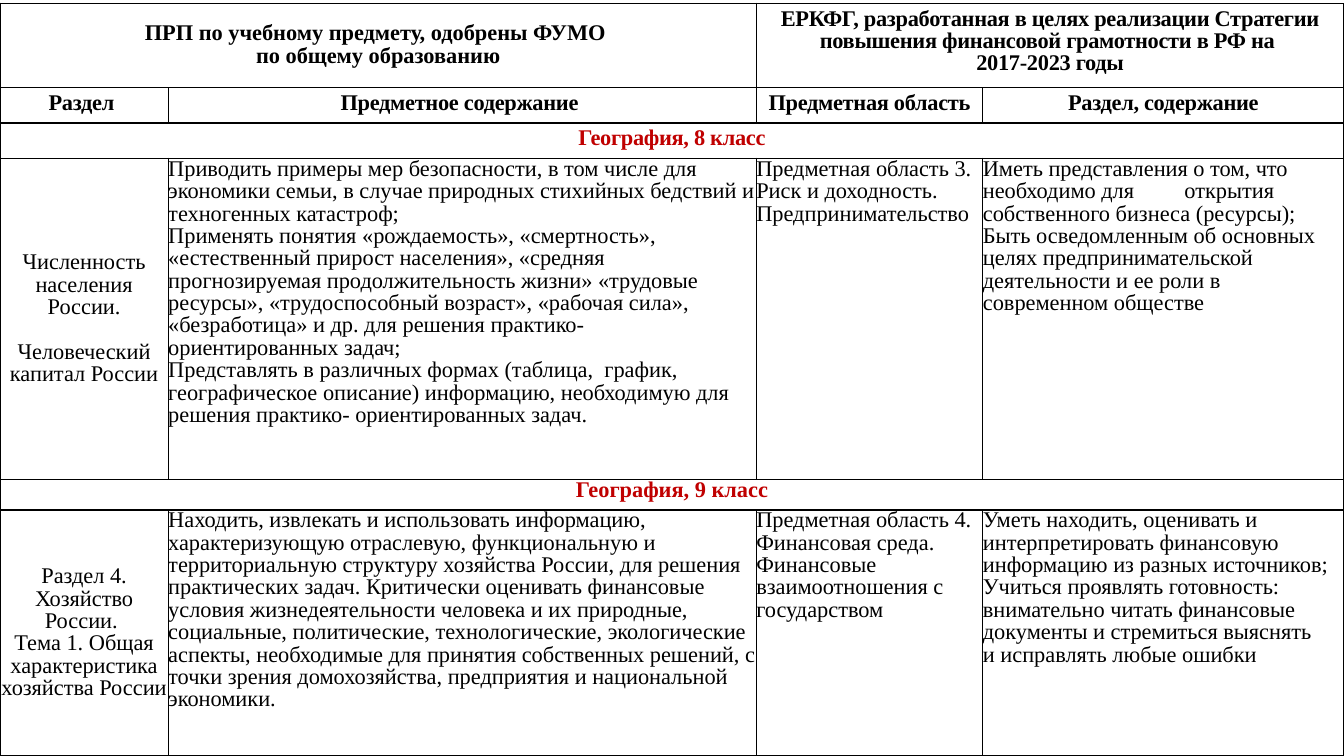
"""Builds a slide comparing geography curricula with the financial literacy framework."""
import pptx
import pptx.dml.color
import pptx.enum.text
import pptx.util
from lxml import etree
from pptx.oxml.ns import qn

Cm = pptx.util.Cm
Pt = pptx.util.Pt
RGBColor = pptx.dml.color.RGBColor
ALIGN = pptx.enum.text.PP_ALIGN
ANCHOR = pptx.enum.text.MSO_ANCHOR

BLACK = RGBColor(0x00, 0x00, 0x00)
RED = RGBColor(0xC0, 0x00, 0x00)

COLUMN_WIDTHS = [4.24, 14.82, 5.71, 9.1]
ROW_HEIGHTS = [2.13, 0.89, 0.89, 8.1, 0.76, 6.2]

NO_MARGINS = dict.fromkeys(("margin_left", "margin_right", "margin_top", "margin_bottom"), 0)
CENTERED = {"alignment": ALIGN.CENTER}
LEFT = {"alignment": ALIGN.LEFT}
MIDDLE = {"vertical_anchor": ANCHOR.MIDDLE}

HEADING = {"cell": {}, "paragraph": CENTERED, "font": {"bold": True}, "color": BLACK, "tracking": -20}
TITLE = {**HEADING, "cell": MIDDLE, "tracking": 0}
GRADE = {**HEADING, "color": RED}
TIGHT_GRADE = {**GRADE, "cell": NO_MARGINS, "tracking": 0}
TOPIC = {"cell": {**NO_MARGINS, **MIDDLE}, "paragraph": CENTERED, "font": {"bold": False},
         "color": BLACK, "tracking": 0}
BODY = {**TOPIC, "cell": NO_MARGINS, "paragraph": LEFT}

MERGES = [(0, 0, 1), (0, 2, 3), (2, 0, 3), (4, 0, 3)]

CELLS = [
    (0, 0, TITLE, ["ПРП по учебному предмету, одобрены ФУМО ", "по общему образованию"]),
    (0, 2, HEADING, [
        "ЕРКФГ, разработанная в целях реализации Стратегии повышения финансовой грамотности в РФ на ",
        "2017-2023 годы"]),
    (1, 0, HEADING, ["Раздел "]),
    (1, 1, HEADING, ["Предметное содержание "]),
    (1, 2, HEADING, ["Предметная область"]),
    (1, 3, HEADING, ["Раздел, содержание"]),
    (2, 0, GRADE, ["География, 8 класс"]),
    (3, 0, TOPIC, ["Численность населения России.", "Человеческий капитал России"]),
    (3, 1, BODY, [
        "Приводить примеры мер безопасности, в том числе для экономики семьи, "
        "в случае природных стихийных бедствий и техногенных катастроф;",
        "Применять понятия «рождаемость», «смертность», «естественный прирост населения», "
        "«средняя прогнозируемая продолжительность жизни» «трудовые ресурсы», "
        "«трудоспособный возраст», «рабочая сила», «безработица» и др. "
        "для решения практико- ориентированных задач;",
        "Представлять в различных формах (таблица,  график, географическое описание) "
        "информацию, необходимую для решения практико- ориентированных задач."]),
    (3, 2, BODY, ["Предметная область 3.", "Риск и доходность. ", "Предпринимательство"]),
    (3, 3, BODY, [
        "Иметь представления о том, что необходимо для\tоткрытия собственного бизнеса (ресурсы);",
        "Быть осведомленным об основных целях предпринимательской деятельности "
        "и ее роли в современном обществе"]),
    (4, 0, TIGHT_GRADE, ["География, 9 класс"]),
    (5, 0, TOPIC, ["Раздел 4.", "Хозяйство России. ", "Тема 1. Общая характеристика хозяйства России"]),
    (5, 1, BODY, [
        "Находить, извлекать и использовать информацию, характеризующую отраслевую, "
        "функциональную и территориальную структуру хозяйства России, для решения "
        "практических задач. Критически оценивать финансовые условия жизнедеятельности "
        "человека и их природные, социальные, политические, технологические, экологические "
        "аспекты, необходимые для принятия собственных решений, с точки зрения "
        "домохозяйства, предприятия и национальной",
        "экономики."]),
    (5, 2, BODY, ["Предметная область 4.", "Финансовая среда.", "Финансовые взаимоотношения с государством"]),
    (5, 3, BODY, [
        "Уметь находить, оценивать и интерпретировать финансовую информацию из разных "
        "источников; Учиться проявлять готовность: внимательно читать финансовые документы "
        "и стремиться выяснять",
        "и исправлять любые ошибки"]),
]


class SlideBuilder:
    """Holds the text style and the current slide."""

    def __init__(self, slide):
        self.slide = slide
        self.font = {"name": "Times New Roman", "size": Pt(16)}
        self.paragraph = {"line_spacing": 0.9, "space_before": Pt(0), "space_after": Pt(0)}

    def apply(self, target, values):
        """Set every attribute named in the values."""
        for name, value in values.items():
            setattr(target, name, value)

    def add_table(self, top, widths, heights):
        """Add a plain table with black borders."""
        frame = self.slide.shapes.add_table(
            len(heights), len(widths), 0, Cm(top), Cm(sum(widths)), Cm(sum(heights)))
        table = frame.table
        self.apply(table, {"first_row": False, "horz_banding": False})
        for column, width in zip(table.columns, widths):
            column.width = Cm(width)
        for row, height in zip(table.rows, heights):
            row.height = Cm(height)
        for cell in table.iter_cells():
            cell.fill.background()
            self.add_borders(cell)
        return table

    def add_borders(self, cell):
        """Draw a one-point line on each side of the cell."""
        properties = cell._tc.get_or_add_tcPr()
        for index, side in enumerate(("a:lnL", "a:lnR", "a:lnT", "a:lnB")):
            line = etree.Element(qn(side), w=str(Pt(1)))
            fill = etree.SubElement(line, qn("a:solidFill"))
            etree.SubElement(fill, qn("a:srgbClr"), val=str(BLACK))
            properties.insert(index, line)

    def fill_cell(self, cell, style, texts):
        """Write the paragraphs of a cell in the given style."""
        self.apply(cell, style["cell"])
        for index, text in enumerate(texts):
            paragraph = cell.text_frame.paragraphs[0] if index == 0 else cell.text_frame.add_paragraph()
            self.apply(paragraph, {**self.paragraph, **style["paragraph"]})
            run = paragraph.add_run()
            run.text = text
            self.apply(run.font, {**self.font, **style["font"]})
            run.font.color.rgb = style["color"]
            run._r.get_or_add_rPr().set("spc", str(style["tracking"]))


def main():
    """Build and save the presentation."""
    presentation = pptx.Presentation()
    presentation.slide_width = Cm(33.87)
    presentation.slide_height = Cm(19.05)
    builder = SlideBuilder(presentation.slides.add_slide(presentation.slide_layouts[6]))
    table = builder.add_table(0.08, COLUMN_WIDTHS, ROW_HEIGHTS)
    for row, first, last in MERGES:
        table.cell(row, first).merge(table.cell(row, last))
    for row, column, style, texts in CELLS:
        builder.fill_cell(table.cell(row, column), style, texts)
    table.cell(3, 0).text_frame.paragraphs[1].space_before = Pt(16)
    presentation.save("out.pptx")


if __name__ == "__main__":
    main()
